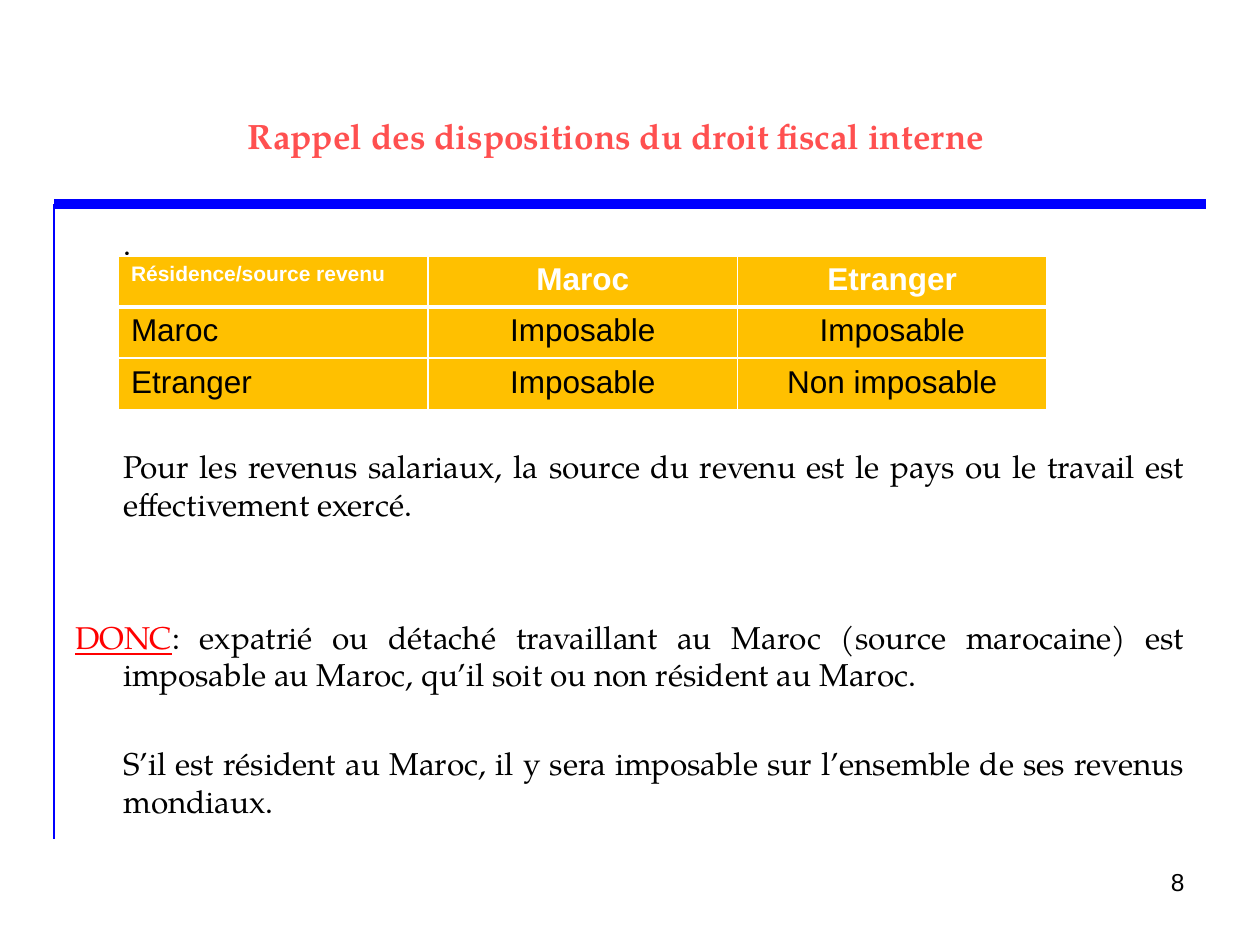
from lxml.etree import SubElement
from pptx import Presentation
from pptx.dml.color import RGBColor
from pptx.enum.shapes import MSO_CONNECTOR as Conn
from pptx.enum.text import MSO_ANCHOR as Anchor, PP_ALIGN as Align
from pptx.oxml.ns import qn
from pptx.util import Inches, Pt

BLUE = RGBColor(0x00, 0x00, 0xFF)
CORAL = RGBColor(0xFF, 0x50, 0x50)
RED = RGBColor(0xFF, 0x00, 0x00)
GOLD = RGBColor(0xFF, 0xC0, 0x00)
BLACK = RGBColor(0x00, 0x00, 0x00)
WHITE = RGBColor(0xFF, 0xFF, 0xFF)
SERIF, SANS = "TeX Gyre Pagella", "Arial"
BODY = {"name": SERIF, "size": Pt(18)}

ROWS = [
    ["Résidence/source revenu", "Maroc", "Etranger"],
    ["Maroc", "Imposable", "Imposable"],
    ["Etranger", "Imposable", "Non imposable"],
]
PARAS = [
    (0, 0, [(".", BLACK, False)]),
    (105.7, 0, [("Pour les revenus salariaux, la source du revenu est le pays ou "
                 "le travail est effectivement exercé.", BLACK, False)]),
    (54.3, -0.38, [("DONC", RED, True),
                   (": expatrié ou détaché travaillant au Maroc (source marocaine) est "
                    "imposable au Maroc, qu’il soit ou non résident au Maroc.", BLACK, False)]),
    (28.9, 0, [("S’il est résident au Maroc, il y sera imposable sur l’ensemble "
                "de ses revenus mondiaux.", BLACK, False)]),
]


def style(font, color, **form):
    """Set the colour and the other format values of a font."""
    font.color.rgb = color
    for key, value in form.items():
        setattr(font, key, value)


def add_box(slide, x, y, w, h):
    """Add a wrapping text frame."""
    frame = slide.shapes.add_textbox(Inches(x), Inches(y), Inches(w), Inches(h)).text_frame
    frame.word_wrap = True
    return frame


def add_label(slide, box, text, align, anchor, color, **form):
    """Add one line of text in a box."""
    frame = add_box(slide, *box)
    frame.vertical_anchor = anchor
    para = frame.paragraphs[0]
    para.alignment = align
    run = para.add_run()
    run.text = text
    style(run.font, color, **form)


def add_rules(slide, x, y, w, h):
    """Draw the thick top rule and the thin left rule."""
    for right, low, width in [(x + w, y, 6), (x, y + h, 1.5)]:
        rule = slide.shapes.add_connector(
            Conn.STRAIGHT, Inches(x), Inches(y), Inches(right), Inches(low))
        rule.line.color.rgb = BLUE
        rule.line.width = Pt(width)
        SubElement(rule._element.spPr, qn("a:effectLst"))


def add_body(slide, x, y, w, h):
    """Write the justified paragraphs."""
    frame = add_box(slide, x, y, w, h)
    frame.margin_top = Inches(0.08)
    for i, (gap, indent, parts) in enumerate(PARAS):
        para = frame.add_paragraph() if i else frame.paragraphs[0]
        para.alignment = Align.JUSTIFY
        props = para._p.get_or_add_pPr()
        props.set("marL", str(Inches(0.38)))
        props.set("indent", str(Inches(indent)))
        if gap:
            para.space_before = Pt(gap)
        for text, color, under in parts:
            run = para.add_run()
            run.text = text
            style(run.font, color, underline=under, **BODY)


def add_edges(cell, head):
    """Draw white borders, thicker between header and body."""
    props = cell._tc.get_or_add_tcPr()
    for i, side in enumerate(["lnL", "lnR", "lnT", "lnB"]):
        width = 3 if head and side == "lnB" else 1
        edge = props.makeelement(qn(f"a:{side}"), {"w": str(Pt(width))})
        fill = SubElement(edge, qn("a:solidFill"))
        SubElement(fill, qn("a:srgbClr"), val=str(WHITE))
        props.insert(i, edge)


def add_grid(slide, x, y, w, h):
    """Build the table of tax cases."""
    grid = slide.shapes.add_table(
        len(ROWS), len(ROWS[0]), Inches(x), Inches(y), Inches(w), Inches(h)).table
    for r, row in enumerate(ROWS):
        for c, text in enumerate(row):
            cell = grid.cell(r, c)
            cell.text = text
            cell.fill.solid()
            cell.fill.fore_color.rgb = GOLD
            add_edges(cell, r == 0)
            para = cell.text_frame.paragraphs[0]
            para.alignment = Align.CENTER if c else Align.LEFT
            style(para.runs[0].font, BLACK if r else WHITE, name=SANS,
                  size=Pt(18 if r or c else 12), bold=r == 0)


def main():
    """Build and save the slide."""
    deck = Presentation()
    deck.slide_width, deck.slide_height = Inches(10), Inches(7.5)
    slide = deck.slides.add_slide(deck.slide_layouts[6])
    add_rules(slide, 0.43, 1.62, 9.14, 5.04)
    add_label(slide, (7.17, 6.83, 2.33, 0.52), "8", Align.RIGHT, Anchor.TOP,
              BLACK, name=SANS, size=Pt(14))
    add_label(slide, (0.39, 0.45, 9, 1.25), "Rappel des dispositions du droit fiscal interne",
              Align.CENTER, Anchor.MIDDLE, CORAL, name=SERIF, size=Pt(20), bold=True)
    add_body(slide, 0.5, 1.7, 9, 5)
    add_grid(slide, 0.94, 2.03, 7.37, 1.22)
    deck.save("out.pptx")


if __name__ == "__main__":
    main()
